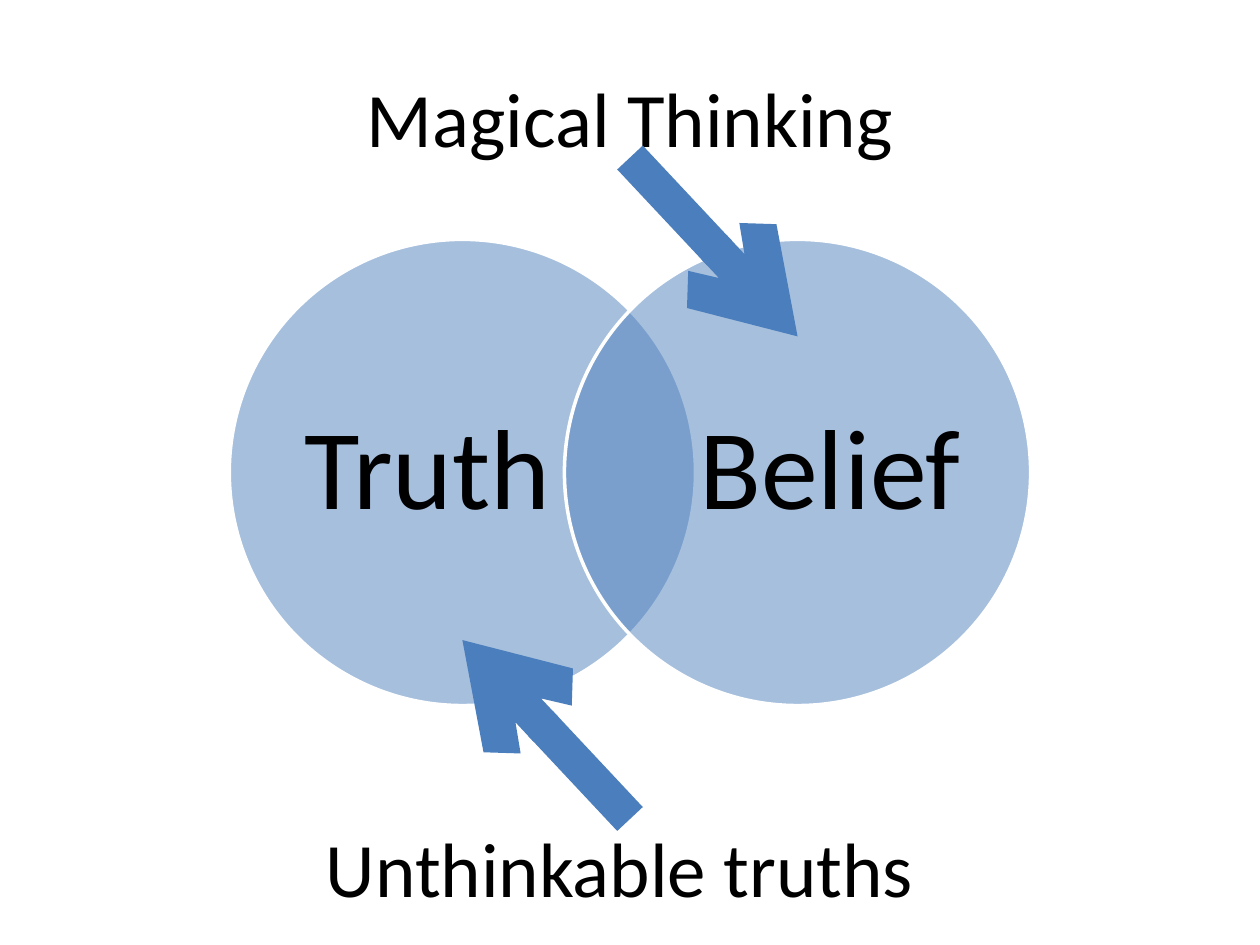
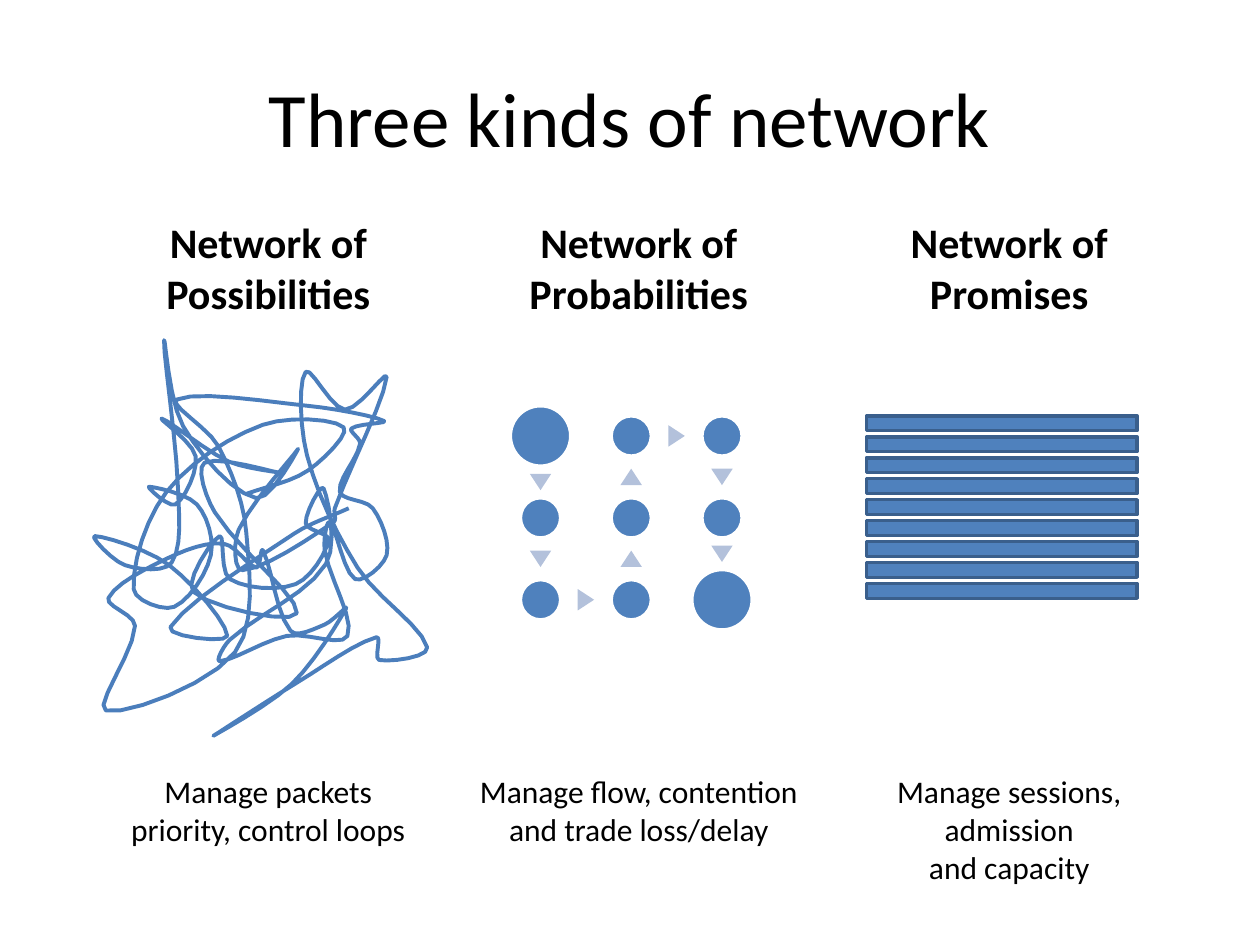
from itertools import pairwise

from lxml.etree import SubElement
from pptx import Presentation
from pptx.dml.color import RGBColor
from pptx.enum.shapes import MSO_CONNECTOR as Link, MSO_SHAPE as Kind
from pptx.enum.text import MSO_ANCHOR as Anchor, PP_ALIGN as Align
from pptx.oxml.ns import qn
from pptx.util import Inches, Pt

# The slide is a grid of 100 columns by 75 rows of square cells.
COLS, ROWS = 100, 75
CELL = Inches(0.1)

BLACK = RGBColor(0x00, 0x00, 0x00)
WHITE = RGBColor(0xFF, 0xFF, 0xFF)
BLUE = RGBColor(0x4F, 0x81, 0xBD)
STROKE = RGBColor(0x4B, 0x7E, 0xBC)
EDGE = RGBColor(0x3A, 0x5F, 0x8C)
PALE = RGBColor(0xB3, 0xC1, 0xDB)
FONT = "Calibri"

TITLE = (5, 3, 90, 12.5)
KINDS = [
    (("Network of", "Possibilities"), ("Manage packets", "priority, control loops")),
    (("Network of", "Probabilities"), ("Manage flow, contention", "and trade loss/delay")),
    (("Network of", "Promises"), ("Manage sessions,", "admission", "and capacity")),
]

# Knots of the tangled line; only their proportions matter.
TANGLE = [
    (194, 392), (244, 373), (272, 339), (208, 337), (132, 390), (106, 467),
    (138, 481), (167, 440), (156, 400), (118, 386), (139, 400), (155, 362),
    (128, 332), (181, 366), (222, 375), (162, 367), (170, 406), (235, 486),
    (153, 469), (174, 425), (182, 459), (234, 463), (260, 428), (242, 415),
    (256, 387), (258, 447), (182, 507), (174, 524), (227, 504), (275, 504),
    (257, 436), (261, 414), (281, 459), (306, 440), (295, 403), (269, 390),
    (285, 352), (278, 340), (304, 334), (244, 322), (140, 317), (173, 354),
    (195, 422), (186, 517), (84, 563), (107, 496), (86, 474), (134, 442),
    (177, 431), (203, 450), (208, 436), (230, 500), (257, 495), (274, 482),
    (231, 542), (169, 583), (235, 541), (298, 505), (300, 523), (338, 513),
    (283, 450), (243, 361), (242, 295), (273, 325), (306, 299), (265, 403),
    (264, 414), (192, 452), (189, 420), (236, 356), (203, 395), (145, 338),
    (130, 270), (141, 387), (136, 446), (99, 448), (75, 425), (134, 448),
    (180, 504), (135, 497), (233, 423), (276, 403),
]


def units(*cells):
    return [int(n * CELL) for n in cells]


def text(slide, box, lines, size, bold=False, fit=True, inset=None):
    """Add centred lines; with fit they wrap and sit mid-height in the box."""
    frame = slide.shapes.add_textbox(*units(*box)).text_frame
    frame.word_wrap = fit
    frame.vertical_anchor = Anchor.MIDDLE if fit else Anchor.TOP
    if inset is not None:
        frame.margin_left = frame.margin_right = inset
        frame.margin_top = frame.margin_bottom = inset
    para = frame.paragraphs[0]
    para.alignment = Align.CENTER
    for i, line in enumerate(lines):
        if i:
            para.add_line_break()
        run = para.add_run()
        run.text = line
        run.font.name, run.font.size = FONT, Pt(size)
        run.font.bold, run.font.color.rgb = bold, BLACK
    return para


def shape(slide, kind, mid, size, fill, line=None):
    """Add a preset shape centred on a point."""
    (x, y), (w, h) = mid, size
    item = slide.shapes.add_shape(kind, *units(x - w / 2, y - h / 2, w, h))
    item.shadow.inherit = False
    item.fill.solid()
    item.fill.fore_color.rgb = fill
    if line is None:
        item.line.fill.background()
    else:
        item.line.color.rgb, item.line.width = line, Pt(2)
    return item


def arrow(slide, start, end):
    link = slide.shapes.add_connector(Link.STRAIGHT, *units(*start, *end))
    link.line.color.rgb, link.line.width = STROKE, Pt(20)
    SubElement(link.line._get_or_add_ln(), qn("a:tailEnd"), type="arrow")
    SubElement(link._element.spPr, qn("a:effectLst"))


def venn(slide, box):
    left, top, wide, dia = box
    mid = top + dia / 2
    for word, x, shift in (
        ("Truth", left + dia / 2, -2.75),
        ("Belief", left + wide - dia / 2, 2.6),
    ):
        disc = shape(slide, Kind.OVAL, (x, mid), (dia, dia), BLUE, WHITE)
        tint = disc._element.spPr.find(qn("a:solidFill"))[0]
        SubElement(tint, qn("a:alpha"), val="50000")
        # The label leans away from the overlap.
        label = (x + shift - 10.65, mid - 14.15, 21.3, 28.3)
        text(slide, label, [word], 65, inset=0).line_spacing = 0.9


def smooth(knots, steps=6):
    """Yield points on a curve through the knots, tight at sharp turns."""
    dots = [complex(*knot) for knot in knots]
    ends = [dots[0], *dots, dots[-1]]
    slopes = [
        (c - a) / (abs(b - a) + abs(c - b))
        for a, b, c in zip(ends, ends[1:], ends[2:])
    ]
    yield dots[0]
    for (a, p), (b, q) in pairwise(zip(dots, slopes)):
        span = abs(b - a)
        for i in range(1, steps + 1):
            t = i / steps
            s = 1 - t
            bend = span * t * s * (s * p - t * q)
            yield a * s * s * (1 + 2 * t) + b * t * t * (3 - 2 * t) + bend


def tangle(slide, box):
    left, top, wide, high = units(*box)
    xs, ys = zip(*TANGLE)
    dx, dy = wide / (max(xs) - min(xs)), high / (max(ys) - min(ys))
    dots = [
        (left + (z.real - min(xs)) * dx, top + (z.imag - min(ys)) * dy)
        for z in smooth(TANGLE)
    ]
    pen = slide.shapes.build_freeform(*dots[0])
    pen.add_line_segments(dots[1:], close=False)
    line = pen.convert_to_shape()
    line.shadow.inherit = False
    line.fill.background()
    line.line.color.rgb, line.line.width = STROKE, Pt(2.25)


def nodes(slide, box):
    """Draw a snaking 3 by 3 path, its two ends larger, with marks between."""
    left, top, wide, high = box
    big, small = 4.8, 3.2
    dx, dy = (wide - big) / 2, (high - big) / 2
    path = [(c, r) for c in range(3) for r in (range(3), (2, 1, 0))[c % 2]]
    spots = [(left + big / 2 + c * dx, top + big / 2 + r * dy) for c, r in path]
    sizes = [big] + [small] * 7 + [big]
    for spot, size in zip(spots, sizes):
        shape(slide, Kind.OVAL, spot, (size, size), BLUE, WHITE)
    for ((x, y), m), ((u, v), n) in pairwise(zip(spots, sizes)):
        side, down = (u > x), (v > y) - (v < y)
        lean = (m - n) / 4
        mid = ((x + u) / 2 + side * lean, (y + v) / 2 + (not side) * down * lean)
        mark = shape(slide, Kind.ISOSCELES_TRIANGLE, mid, (1.7, 1.3), PALE)
        mark.rotation = 90 if side else 90 + 90 * down


def bars(slide, box, count=9):
    left, top, wide, high = box
    tall = 5
    step = (high - tall) / (count - 1)
    for i in range(count):
        mid = (left + wide / 2, top + tall / 2 + i * step)
        shape(slide, Kind.MATH_MINUS, mid, (wide, tall), BLUE, EDGE)


def beliefs(slide):
    text(slide, TITLE, ["Magical Thinking"], 44)
    venn(slide, (18.2, 19, 63.6, 37))
    arrow(slide, (50, 12.5), (63.3, 26.7))
    text(slide, (4.2, 62.5, 90, 12.5), ["Unthinkable truths"], 44)
    arrow(slide, (50, 65), (36.7, 50.8))


def networks(slide):
    text(slide, TITLE, ["Three kinds of network"], 44)
    first, pitch, wide = 21.3, 29.4, 27.6
    figures = [
        (tangle, 27, 26.4, 31.4),
        (nodes, 32.2, 19.2, 17.8),
        (bars, 31.1, 29.2, 18.3),
    ]
    for i, ((head, note), (draw, top, w, h)) in enumerate(zip(KINDS, figures)):
        mid = first + i * pitch
        left = mid - wide / 2
        text(slide, (left, 16.7, wide, 9.1), head, 24, bold=True, fit=False)
        draw(slide, (mid - 0.6 - w / 2, top, w, h))
        text(slide, (left, 60.8, wide, 7.1), note, 18, fit=False)


def main():
    deck = Presentation()
    deck.slide_width, deck.slide_height = units(COLS, ROWS)
    for build in (beliefs, networks):
        build(deck.slides.add_slide(deck.slide_layouts[6]))
    deck.save("out.pptx")


if __name__ == "__main__":
    main()
